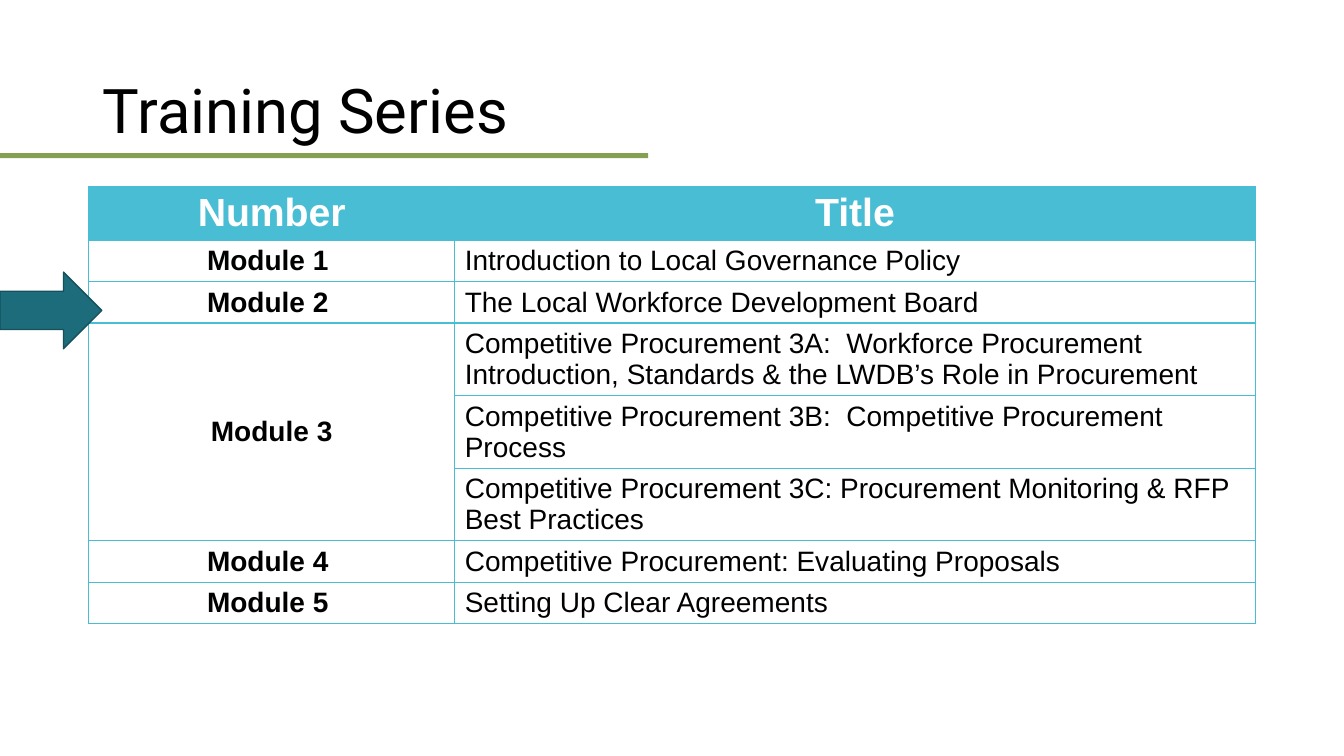
import pptx
import pptx.util
import pptx.dml.color
import pptx.enum.shapes
import pptx.enum.text
import lxml.etree

Inches = pptx.util.Inches
Pt = pptx.util.Pt
ALIGN = pptx.enum.text.PP_ALIGN
MIDDLE = pptx.enum.text.MSO_ANCHOR.MIDDLE
SHAPE = pptx.enum.shapes.MSO_SHAPE
NS = "http://schemas.openxmlformats.org/drawingml/2006/main"

AQUA = "48BDD4"
BLACK = "000000"
WHITE = "FFFFFF"

# Module name and its titles
MODULES = [
    ("Module 1 ", ["Introduction to Local Governance Policy "]),
    ("Module 2 ", ["The Local Workforce Development Board "]),
    ("Module 3", [
        "Competitive Procurement 3A:  Workforce Procurement Introduction, "
        "Standards & the LWDB’s Role in Procurement ",
        "Competitive Procurement 3B:  Competitive Procurement Process  ",
        "Competitive Procurement 3C: Procurement Monitoring & RFP Best Practices",
    ]),
    ("Module 4 ", ["Competitive Procurement: Evaluating Proposals "]),
    ("Module 5 ", ["Setting Up Clear Agreements "]),
]
HEAD_H, LINE_H, PAIR_H = 0.53, 0.41, 0.72


def color(value):
    return pptx.dml.color.RGBColor.from_string(value)


def style(frame, face, size, shade, bold=False, align=ALIGN.LEFT):
    for para in frame.paragraphs:
        para.alignment = align
        for run in para.runs:
            run.font.name = face
            run.font.size = Pt(size)
            run.font.bold = bold
            run.font.color.rgb = color(shade)


def add_block(slide, kind, box, fill, line=None):
    block = slide.shapes.add_shape(kind, *map(Inches, box))
    block.shadow.inherit = False
    block.fill.solid()
    block.fill.fore_color.rgb = color(fill)
    if line:
        block.line.color.rgb = color(line)
        block.line.width = Pt(1)
    else:
        block.line.fill.background()


def add_title(slide, box, text):
    # Green rule under the heading
    left, top, width, height = box
    add_block(slide, SHAPE.RECTANGLE, (0, top + 1.12, 6.43, 0.05), "85A051")
    # Heading
    title = slide.shapes.title
    title.left, title.top, title.width, title.height = map(Inches, box)
    frame = title.text_frame
    frame.text = text
    frame.vertical_anchor = MIDDLE
    frame.paragraphs[0].line_spacing = 0.9
    style(frame, "Roboto", 44, BLACK)


def add_edges(cell):
    props = cell._tc.get_or_add_tcPr()
    for side in ("lnL", "lnR", "lnT", "lnB"):
        edge = lxml.etree.SubElement(props, f"{{{NS}}}{side}", w=str(Pt(1)))
        fill = lxml.etree.SubElement(edge, f"{{{NS}}}solidFill")
        lxml.etree.SubElement(fill, f"{{{NS}}}srgbClr", val=AQUA)


def fill_cell(cell, text, head=False, bold=True, align=ALIGN.CENTER):
    cell.text = text
    if head:
        cell.fill.solid()
        cell.fill.fore_color.rgb = color(AQUA)
        style(cell.text_frame, "Arial", 28, WHITE, bold, align)
    else:
        cell.fill.background()
        cell.vertical_anchor = MIDDLE
        style(cell.text_frame, "Arial", 20, BLACK, bold, align)


def add_modules(slide, box):
    heights = [HEAD_H]
    for name, titles in MODULES:
        heights += [PAIR_H if len(titles) > 1 else LINE_H] * len(titles)
    left, top, width = box
    frame = slide.shapes.add_table(len(heights), 2, Inches(left), Inches(top),
                                   Inches(width), Inches(sum(heights)))
    table = frame.table
    table.horz_banding = False
    table.columns[0].width = Inches(3.63)
    table.columns[1].width = Inches(width - 3.63)
    for row, height in zip(table.rows, heights):
        row.height = Inches(height)
    for cell in table.iter_cells():
        add_edges(cell)

    # Header row
    for col, text in enumerate(("Number", "Title")):
        fill_cell(table.cell(0, col), text, head=True)

    # Module rows
    row = 1
    for name, titles in MODULES:
        last = row + len(titles) - 1
        for step, text in enumerate(titles):
            fill_cell(table.cell(row + step, 0), name if step == 0 else "")
            fill_cell(table.cell(row + step, 1), text,
                      bold=False, align=ALIGN.LEFT)
        if last > row:
            table.cell(row, 0).merge(table.cell(last, 0))
        row = last + 1


def main():
    deck = pptx.Presentation()
    deck.slide_width = Inches(13.33)
    deck.slide_height = Inches(7.5)
    slide = deck.slides.add_slide(deck.slide_layouts[5])
    add_title(slide, (0.92, 0.4, 11.5, 1.45), "Training Series")
    add_modules(slide, (0.88, 1.85, 11.57))
    # Arrow at the current module
    add_block(slide, SHAPE.RIGHT_ARROW, (0, 2.7, 1.01, 0.76), "1D6C7B", "15505B")
    deck.save("out.pptx")


if __name__ == "__main__":
    main()
